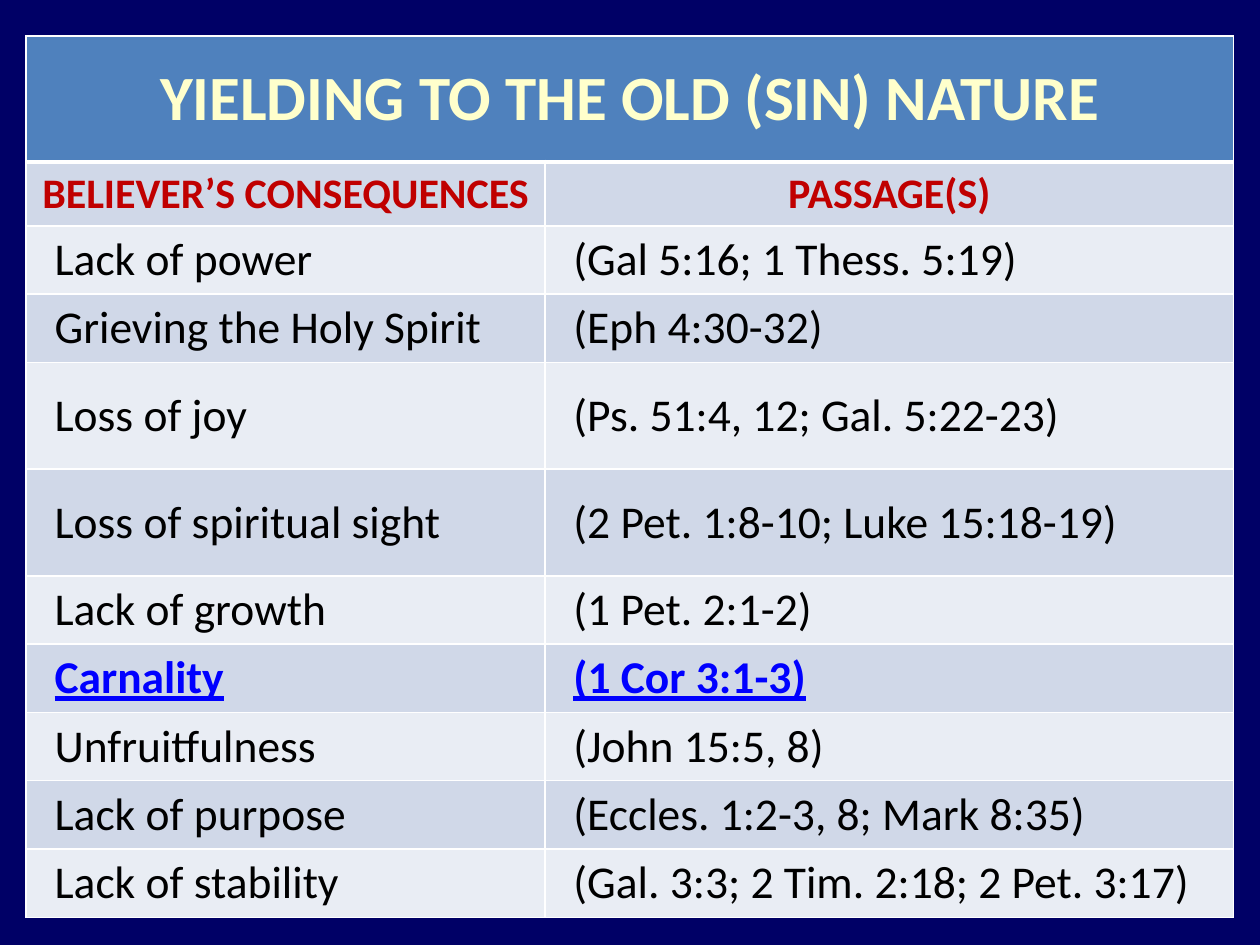
"""Build the slide with the table of consequences of yielding to the old nature."""
from lxml import etree
from pptx import Presentation
from pptx import util as u
from pptx.dml.color import RGBColor
from pptx.enum import text
from pptx.oxml import ns

NAVY = RGBColor(0x00, 0x00, 0x66)
BLUE = RGBColor(0x4F, 0x81, 0xBD)
BAND_DARK = RGBColor(0xD0, 0xD8, 0xE8)
BAND_LIGHT = RGBColor(0xE9, 0xED, 0xF4)
CREAM = RGBColor(0xFF, 0xFF, 0xCC)
RED = RGBColor(0xC0, 0x00, 0x00)
BLACK = RGBColor(0x00, 0x00, 0x00)
LINK = RGBColor(0x00, 0x00, 0xFF)
WHITE = RGBColor(0xFF, 0xFF, 0xFF)

TITLE = {"size": u.Pt(36), "bold": True}
HEAD = {"size": u.Pt(24), "bold": True}
BODY = {"size": u.Pt(26), "bold": False}
MARKED = {"size": u.Pt(26), "bold": True, "underline": True}

ROWS = [
    ("YIELDING TO THE OLD (SIN) NATURE", "", 72, TITLE, CREAM),
    ("BELIEVER’S CONSEQUENCES", "PASSAGE(S)", 34, HEAD, RED),
    ("Lack of power", "(Gal 5:16; 1 Thess. 5:19)", 34, BODY, BLACK),
    ("Grieving the Holy Spirit", "(Eph 4:30-32)", 34, BODY, BLACK),
    ("Loss of joy", "(Ps. 51:4, 12; Gal. 5:22-23)", 61, BODY, BLACK),
    ("Loss of spiritual sight", "(2 Pet. 1:8-10; Luke 15:18-19)", 61, BODY, BLACK),
    ("Lack of growth", "(1 Pet. 2:1-2)", 34, BODY, BLACK),
    ("Carnality", "(1 Cor 3:1-3)", 34, MARKED, LINK),
    ("Unfruitfulness", "(John 15:5, 8)", 34, BODY, BLACK),
    ("Lack of purpose", "(Eccles. 1:2-3, 8; Mark 8:35)", 34, BODY, BLACK),
    ("Lack of stability", "(Gal. 3:3; 2 Tim. 2:18; 2 Pet. 3:17)", 34, BODY, BLACK),
]


def set_borders(cell, widths):
    tc_pr = cell._tc.get_or_add_tcPr()
    for side, width in zip("LRTB", widths):
        ln = etree.SubElement(tc_pr, ns.qn(f"a:ln{side}"), w=str(u.Pt(width)))
        fill = etree.SubElement(ln, ns.qn("a:solidFill"))
        etree.SubElement(fill, ns.qn("a:srgbClr"), val=str(WHITE))


prs = Presentation()
prs.slide_width, prs.slide_height = u.Pt(720), u.Pt(540)
s = prs.slides.add_slide(prs.slide_layouts[6])
s.background.fill.solid()
s.background.fill.fore_color.rgb = NAVY

frame = s.shapes.add_table(len(ROWS), 2, u.Pt(15), u.Pt(20.5), u.Pt(690), u.Pt(499))
table = frame.table
for column, width in zip(table.columns, (296.5, 393.5)):
    column.width = u.Pt(width)

for i, (consequence, passage, height, style, color) in enumerate(ROWS):
    table.rows[i].height = u.Pt(height)
    for j, words in enumerate((consequence, passage)):
        cell = table.cell(i, j)
        set_borders(cell, (1, 1, 3 if i == 1 else 1, 3 if i == 0 else 1))
        cell.fill.solid()
        cell.fill.fore_color.rgb = BLUE if i == 0 else (BAND_LIGHT, BAND_DARK)[i % 2]
        cell.vertical_anchor = text.MSO_ANCHOR.MIDDLE
        if not words:
            continue
        p = cell.text_frame.paragraphs[0]
        if i < 2:
            p.alignment = text.PP_ALIGN.CENTER
        else:
            p._p.get_or_add_pPr().set("marL", str(u.Pt(9)))
        r = p.add_run()
        r.text = words
        r.font.name = "Calibri"
        r.font.color.rgb = color
        for name, value in style.items():
            setattr(r.font, name, value)

table.cell(0, 0).merge(table.cell(0, 1))
frame.height = u.Pt(499)
prs.save("out.pptx")
